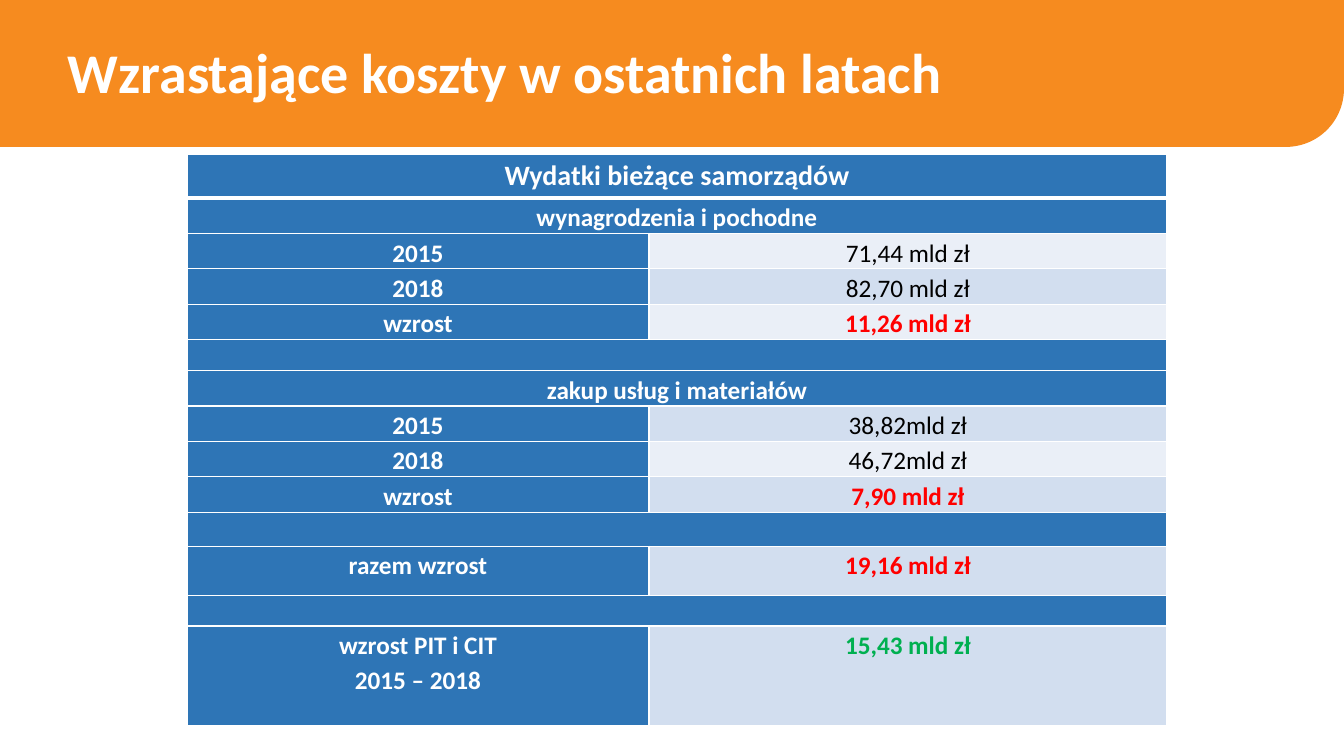
from dataclasses import dataclass

from lxml import etree
from pptx import Presentation
from pptx.dml.color import RGBColor
from pptx.enum.shapes import MSO_SHAPE
from pptx.enum.text import PP_ALIGN
from pptx.oxml.ns import qn
from pptx.util import Emu, Pt

CENTER = PP_ALIGN.CENTER
LEFT = PP_ALIGN.LEFT
ONE_ROUND_CORNER = MSO_SHAPE.ROUND_1_RECTANGLE
EMU_PER_INCH = 914400
PX_PER_INCH = 100.8


@dataclass(frozen=True)
class Theme:
    font: str = "Calibri"
    orange: str = "F68B1F"
    blue: str = "2E75B6"
    light_band: str = "EAEFF7"
    dark_band: str = "D2DEEF"
    white: str = "FFFFFF"
    black: str = "000000"
    red: str = "FF0000"
    green: str = "00B050"
    title_size: int = 40
    heading_size: int = 20
    body_size: int = 18


THEME = Theme()
COLUMNS = [462, 518]
ROWS = [
    (44, "Wydatki bieżące samorządów"),
    (35, "wynagrodzenia i pochodne"),
    (35, "2015", "71,44 mld zł", THEME.black),
    (35, "2018", "82,70 mld zł", THEME.black),
    (35, "wzrost", "11,26 mld zł", THEME.red),
    (31, ""),
    (35, "zakup usług i materiałów"),
    (35, "2015", "38,82mld zł", THEME.black),
    (35, "2018", "46,72mld zł", THEME.black),
    (35, "wzrost", "7,90 mld zł", THEME.red),
    (34, ""),
    (49, "razem wzrost", "19,16 mld zł", THEME.red),
    (30, ""),
    (100, "wzrost PIT i CIT\n2015 – 2018", "15,43 mld zł", THEME.green),
]


def px(n):
    return Emu(round(n * EMU_PER_INCH / PX_PER_INCH))


def rgb(color):
    return RGBColor.from_string(color)


def write(tf, text, size=THEME.body_size, color=THEME.white, bold=True,
          align=CENTER, spacing=1.15):
    for i, line in enumerate(text.split("\n")):
        p = tf.paragraphs[0] if i == 0 else tf.add_paragraph()
        p.alignment = align
        p.line_spacing = spacing
        r = p.add_run()
        r.text = line
        r.font.name = THEME.font
        r.font.size = Pt(size)
        r.font.bold = bold
        r.font.color.rgb = rgb(color)


def add_banner(slide):
    s = slide.shapes.add_shape(ONE_ROUND_CORNER, 0, 0, px(1344), px(147))
    s.adjustments[0] = 0.395
    s.shadow.inherit = False
    s.fill.solid()
    s.fill.fore_color.rgb = rgb(THEME.orange)
    s.line.fill.background()
    s._element.spPr.find(qn("a:xfrm")).set("flipV", "1")


def add_title(slide, text):
    s = slide.shapes.add_textbox(px(58), px(33), px(1022), px(78))
    tf = s.text_frame
    tf.word_wrap = True
    write(tf, text, size=THEME.title_size, align=LEFT, spacing=1.0)


def set_borders(cell, top=1, bottom=1):
    tc_pr = cell._tc.get_or_add_tcPr()
    for side, width in (("L", 1), ("R", 1), ("T", top), ("B", bottom)):
        ln = etree.SubElement(tc_pr, qn(f"a:ln{side}"), w=str(Pt(width)))
        fill = etree.SubElement(ln, qn("a:solidFill"))
        etree.SubElement(fill, qn("a:srgbClr"), val=THEME.white)


def style_cell(cell, color, **borders):
    set_borders(cell, **borders)
    cell.fill.solid()
    cell.fill.fore_color.rgb = rgb(color)
    cell.margin_left = cell.margin_right = px(7)
    cell.margin_top = cell.margin_bottom = 0


def fill_row(table, i, label, value=None, color=None):
    first, second = table.cell(i, 0), table.cell(i, 1)
    band = THEME.dark_band if i % 2 else THEME.light_band
    borders = {0: {"bottom": 3}, 1: {"top": 3}}.get(i, {})
    style_cell(first, THEME.blue, **borders)
    style_cell(second, band if value else THEME.blue, **borders)
    if label:
        size = THEME.body_size if i else THEME.heading_size
        write(first.text_frame, label, size=size)
    if value:
        write(second.text_frame, value, color=color,
              bold=color != THEME.black)
    else:
        first.merge(second)


def add_cost_table(slide):
    heights = [row[0] for row in ROWS]
    frame = slide.shapes.add_table(len(ROWS), len(COLUMNS), px(187), px(154),
                                   px(sum(COLUMNS)), px(sum(heights)))
    table = frame.table
    for column, width in zip(table.columns, COLUMNS):
        column.width = px(width)
    for i, (height, *content) in enumerate(ROWS):
        table.rows[i].height = px(height)
        fill_row(table, i, *content)


def main():
    prs = Presentation()
    prs.slide_width, prs.slide_height = px(1344), px(756)
    slide = prs.slides.add_slide(prs.slide_layouts[6])
    add_banner(slide)
    add_cost_table(slide)
    add_title(slide, "Wzrastające koszty w ostatnich latach")
    prs.save("out.pptx")


if __name__ == "__main__":
    main()
